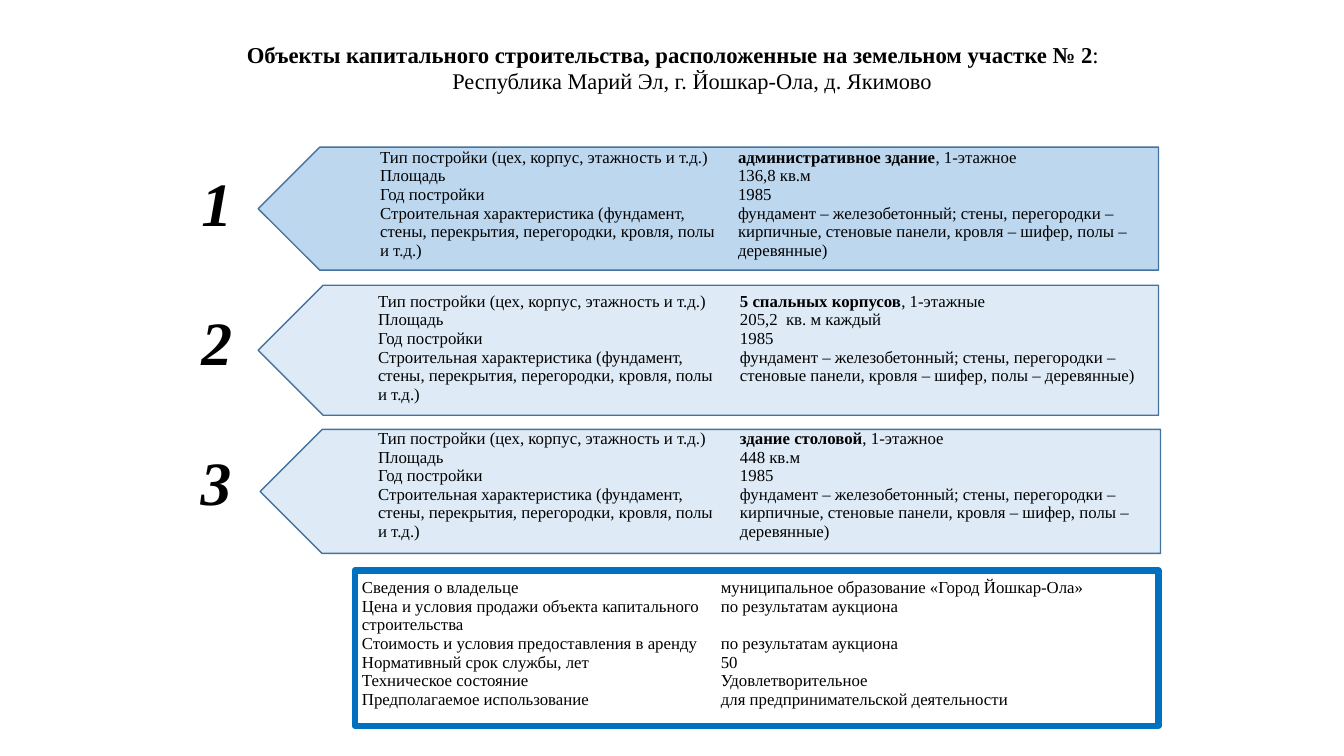
from dataclasses import dataclass

from pptx import Presentation
from pptx import util as u
from pptx.dml.color import RGBColor
from pptx.enum import shapes, text
from pptx.oxml import ns

FONT = "Times New Roman"
BLACK = RGBColor(0x00, 0x00, 0x00)
BLUE = RGBColor(0x00, 0x70, 0xC0)
EDGE = RGBColor(0x43, 0x73, 0x9E)
PALE = RGBColor(0xDE, 0xEB, 0xF7)
SKY = RGBColor(0xBD, 0xD7, 0xEE)
PLAIN = "{2D5ABB26-0587-4C30-8999-92F81FD0307C}"  # table style without grid
LINE = u.Pt(13.3)  # height of one text line at 12 pt

Box = tuple[float, float, float, float]


@dataclass
class Run:
    text: str
    bold: bool = False
    slant: bool = False


@dataclass
class Para:
    runs: list[Run]
    gap: int = 0


@dataclass
class House:
    mark: str
    spot: tuple[float, float]
    arrow: Box
    fill: RGBColor
    grid: Box
    split: float
    facts: list[Para]


def plain(*lines: str) -> list[Para]:
    return [Para([Run(line)]) for line in lines]


def facts(name: str, floors: str, area: str, build: str) -> list[Para]:
    head = Para([Run(name, bold=True), Run(f", {floors}")])
    return [head, *plain(area, "1985", f"фундамент – железобетонный; стены, перегородки –{build}, "
                         "кровля – шифер, полы – деревянные)")]


LABELS = plain(
    "Тип постройки (цех, корпус, этажность и т.д.)",
    "Площадь",
    "Год постройки",
    "Строительная характеристика (фундамент, стены, перекрытия, перегородки, кровля, полы и т.д.)",
)
BRICK = " кирпичные, стеновые панели"
HOUSES = [
    House("1", (1.9, 1.59), (2.56, 1.46, 8.93, 1.22), SKY, (3.68, 1.47, 8.14, 1.21), 3.55,
          facts("административное здание", "1-этажное", "136,8 кв.м", BRICK)),
    House("2", (1.9, 2.97), (2.56, 2.83, 8.93, 1.29), PALE, (3.66, 2.9, 7.83, 1.23), 3.59,
          facts("5 спальных корпусов", "1-этажные", "205,2  кв. м каждый", "стеновые панели")),
    House("3", (1.89, 4.36), (2.58, 4.26, 8.93, 1.23), PALE, (3.66, 4.26, 7.83, 1.3), 3.59,
          facts("здание столовой", "1-этажное", "448 кв.м", BRICK)),
]
TERMS = plain(
    "Сведения о владельце",
    "Цена и условия продажи объекта капитального строительства",
    "Стоимость и условия предоставления в аренду",
    "Нормативный срок службы, лет",
    "Техническое состояние",
    "Предполагаемое использование",
)
DEAL = plain(
    "муниципальное образование «Город Йошкар-Ола»",
    "по результатам аукциона",
    "по результатам аукциона",
    "50",
    "Удовлетворительное",
    "для предпринимательской деятельности",
)
DEAL[2].gap = LINE  # keeps level with the two-line label

deck = Presentation()
deck.slide_width, deck.slide_height = u.Inches(13.33), u.Inches(7.5)
slide = deck.slides.add_slide(deck.slide_layouts[6])


def place(box: Box) -> list[int]:
    return [u.Inches(side) for side in box]


def write(frame, paras: list[Para], size: float, align=text.PP_ALIGN.LEFT, dent: float = 0) -> None:
    frame.word_wrap = True
    for i, item in enumerate(paras):
        para = frame.paragraphs[0] if i == 0 else frame.add_paragraph()
        para.alignment = align
        if item.gap:
            para.space_before = item.gap
        if dent:
            para._p.get_or_add_pPr().set("marL", str(u.Inches(dent)))
        for part in item.runs:
            run = para.add_run()
            run.text = part.text
            font = run.font
            font.name, font.size = FONT, u.Pt(size)
            font.bold, font.italic = part.bold, part.slant
            font.color.rgb = BLACK


def label(box: Box, runs: list[Run], size: float, align=text.PP_ALIGN.LEFT,
          anchor=text.MSO_ANCHOR.TOP) -> None:
    frame = slide.shapes.add_textbox(*place(box)).text_frame
    frame.vertical_anchor = anchor
    write(frame, [Para(runs)], size, align)


def outline(kind, box: Box, edge: RGBColor, width: float):
    shape = slide.shapes.add_shape(kind, *place(box))
    shape.shadow.inherit = False
    shape.fill.background()
    shape.line.color.rgb = edge
    shape.line.width = u.Pt(width)
    return shape


def table(box: Box, split: float, left: list[Para], right: list[Para]) -> None:
    grid = slide.shapes.add_table(1, 2, *place(box)).table
    grid.first_row = grid.horz_banding = False
    for style in grid._tbl.iter(ns.qn("a:tableStyleId")):
        style.text = PLAIN
    for col, width in zip(grid.columns, (split, box[2] - split)):
        col.width = u.Inches(width)
    for cell, paras in zip(grid.rows[0].cells, (left, right)):
        cell.fill.background()
        cell.margin_left = cell.margin_right = u.Inches(0.07)
        cell.margin_top = cell.margin_bottom = 0
        write(cell.text_frame, paras, 12, dent=0.02)


# Heading
label((2.35, 0.28, 8.86, 0.52),
      [Run("Объекты капитального строительства, расположенные на земельном участке № 2", bold=True),
       Run(":")], 16.2, anchor=text.MSO_ANCHOR.MIDDLE)
label((2.06, 0.62, 9.61, 0.37), [Run("Республика Марий Эл, г. Йошкар-Ола, д. Якимово")], 16,
      text.PP_ALIGN.CENTER)

# Numbered buildings
for house in HOUSES:
    arrow = outline(shapes.MSO_SHAPE.PENTAGON, house.arrow, EDGE, 1)
    arrow.rotation = 180
    arrow.fill.solid()
    arrow.fill.fore_color.rgb = house.fill
    label((*house.spot, 0.68, 0.84), [Run(house.mark, bold=True, slant=True)], 44)
    table(house.grid, house.split, LABELS, house.facts)

# Terms of sale and lease
outline(shapes.MSO_SHAPE.RECTANGLE, (3.52, 5.66, 7.97, 1.54), BLUE, 4.5)
table((3.5, 5.74, 8.17, 1.62), 3.56, TERMS, DEAL)

deck.save("out.pptx")
